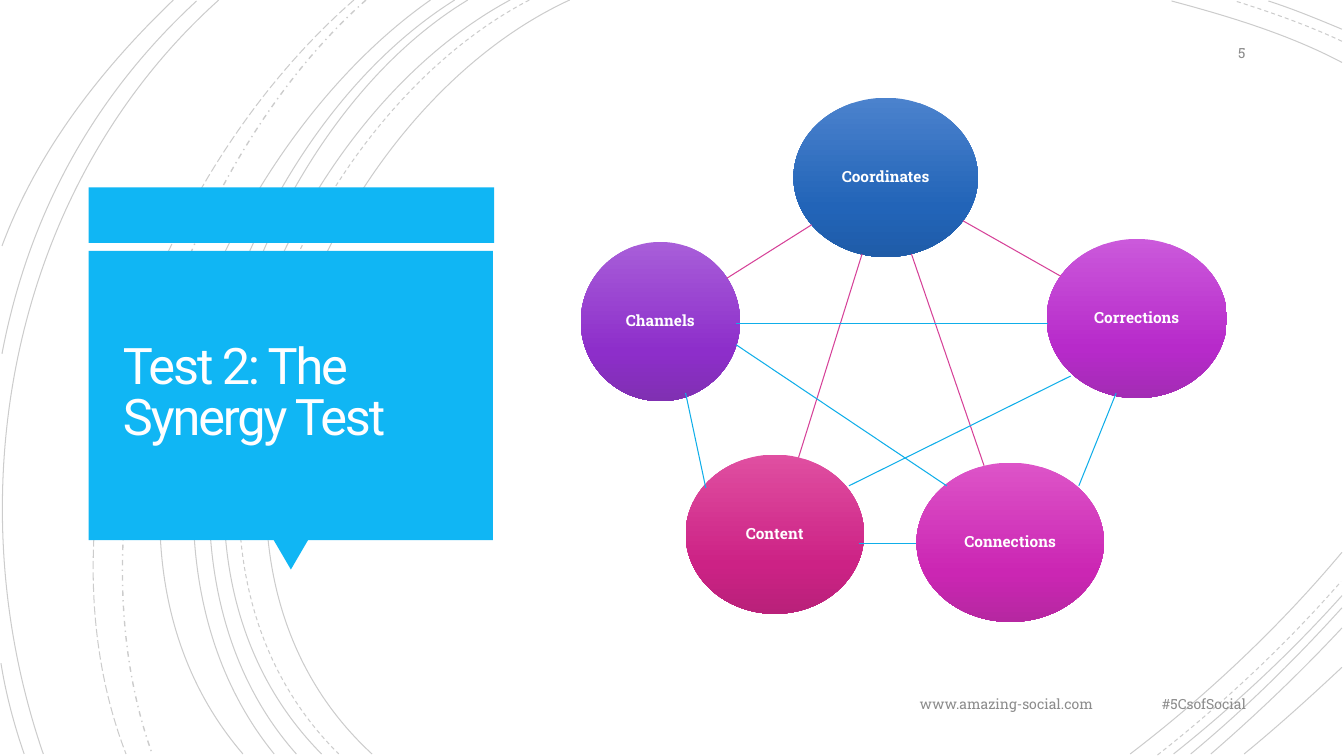
from lxml import etree
from pptx import Presentation
from pptx.dml.color import RGBColor
from pptx.enum.dml import MSO_LINE
from pptx.enum.shapes import MSO_CONNECTOR, MSO_SHAPE
from pptx.enum.text import MSO_ANCHOR, PP_ALIGN
from pptx.oxml.ns import qn
from pptx.util import Inches, Pt

COLORS = {"panel": "10B6F4", "title": "FFFEFF", "footer": "8C8C8C", "label": "FFFFFF",
          "pink": "D64198", "blue": "0FAEE9", "arc": "000000"}
TITLE_FONT, BODY_FONT = "Roboto", "Roboto Slab"

# Cubic curves grouped by dash style: start, two control points, end
ARCS = {
    MSO_LINE.SOLID: [
        [(5.65, 0), (3.15, 1.15), (1.43, 5.4), (3.69, 7.48)],
        [(13.31, 0.62), (12.78, 0.34), (12.18, 0.16), (11.62, 0.01)],
        [(11.21, 7.48), (11.97, 6.9), (12.69, 6.22), (13.31, 5.48)],
        [(5.06, 0), (2.7, 1.27), (1.1, 5.37), (3.19, 7.48)],
        [(13.31, 0.29), (13.07, 0.19), (12.83, 0.09), (12.58, 0.01)],
        [(11.64, 7.48), (12.23, 7.01), (12.8, 6.48), (13.31, 5.91)],
        [(4.64, 0), (2.44, 1.33), (1.1, 5.41), (2.94, 7.48)],
        [(11.81, 7.48), (12.34, 7.04), (12.84, 6.55), (13.31, 6.03)],
        [(4.51, 0), (2.31, 1.38), (0.97, 5.33), (2.72, 7.48)],
        [(12.01, 7.48), (12.46, 7.09), (12.9, 6.67), (13.31, 6.23)],
        [(4.27, 0), (2.17, 1.47), (0.53, 5.29), (2.41, 7.48)],
        [(12.34, 7.48), (12.67, 7.21), (12.99, 6.92), (13.31, 6.62)],
        [(2.17, 0), (0.11, 1.85), (-0.46, 4.9), (0.43, 7.48)],
        [(1.95, 0.01), (0.92, 0.96), (0.28, 2.14), (0.02, 3.51)],
        [(0.01, 6.58), (0.06, 6.89), (0.14, 7.19), (0.24, 7.48)],
        [(1.72, 0), (1, 0.69), (0.37, 1.5), (0.02, 2.44)],
    ],
    MSO_LINE.DASH: [
        [(5.25, 0), (2.85, 1.25), (1.23, 5.37), (3.36, 7.48)],
        [(13.31, 0.41), (12.97, 0.25), (12.6, 0.12), (12.25, 0.01)],
        [(11.48, 7.49), (12.13, 6.98), (12.75, 6.4), (13.3, 5.77)],
    ],
    MSO_LINE.DASH_DOT: [[(3.63, 0), (1.76, 1.66), (0.65, 5.09), (1.51, 7.48)]],
    MSO_LINE.LONG_DASH: [[(3.51, 0), (1.57, 1.69), (0.29, 4.99), (1.25, 7.48)]],
}

# Label, left, top, width, gradient colours
CIRCLES = [
    ("Coordinates", 7.87, 0.97, 1.83, ("4B82CD", "2264B8", "1F5CA8")),
    ("Channels", 5.76, 2.4, 1.58, ("A85ED9", "8D2ECA", "8030B2")),
    ("Corrections", 10.38, 2.37, 1.79, ("CB59DB", "B72ACA", "A32CB4")),
    ("Connections", 9.09, 4.59, 1.86, ("DD54C8", "CB26B3", "B627A1")),
    ("Content", 6.8, 4.51, 1.77, ("E04FA1", "CC2285", "B9217A")),
]
CIRCLE_HEIGHT = 1.58
GRADIENT_POSITIONS = (0, 69, 100)

LINKS = {
    "pink": [(8.05, 2.23, 7.21, 2.76), (9.55, 2.19, 10.52, 2.74),
             (9.04, 2.52, 9.76, 4.62), (8.55, 2.52, 7.92, 4.54)],
    "blue": [(6.8, 3.9, 7, 4.84), (8.52, 5.39, 9.09, 5.39), (10.7, 4.82, 11.07, 3.9),
             (7.3, 3.21, 10.39, 3.21), (7.3, 3.42, 9.39, 4.82), (8.42, 4.82, 10.62, 3.73)],
}


def rgb(name):
    return RGBColor.from_string(COLORS[name])


def set_attributes(target, values):
    for name, value in values.items():
        setattr(target, name, value)


def add_arc(slide, points, dash):
    """Draw one faint cubic curve through a start, two controls and an end."""
    start, *others = [(Inches(x), Inches(y)) for x, y in points]
    builder = slide.shapes.build_freeform(*start)
    builder.add_line_segments(others, close=False)
    shape = builder.convert_to_shape()
    shape.shadow.inherit = False
    shape.fill.background()
    shape.line.color.rgb = rgb("arc")
    shape.line.width = Pt(1 if dash == MSO_LINE.DASH_DOT else 0.75)
    shape.line.dash_style = dash
    color = next(shape.line._ln.iter(qn("a:srgbClr")))
    etree.SubElement(color, qn("a:alpha"), val="20000")
    curve_path = next(shape._element.iter(qn("a:path")))
    curve = etree.SubElement(curve_path, qn("a:cubicBezTo"))
    for segment in curve_path.findall(qn("a:lnTo")):
        curve.append(segment[0])
        curve_path.remove(segment)


def add_shape(slide, kind, box):
    shape = slide.shapes.add_shape(kind, *map(Inches, box))
    shape.shadow.inherit = False
    shape.line.fill.background()
    return shape


def add_panel(slide, kind, box, rotation=0):
    shape = add_shape(slide, kind, box)
    shape.fill.solid()
    shape.fill.fore_color.rgb = rgb("panel")
    shape.rotation = rotation


def write_text(shape, text, font, align, spacing=1, inset=(0.1, 0.05)):
    """Fill a shape with one paragraph, centred vertically, and return it."""
    side, end = map(Inches, inset)
    frame = shape.text_frame
    set_attributes(frame, {"word_wrap": True, "vertical_anchor": MSO_ANCHOR.MIDDLE,
                           "margin_left": side, "margin_right": side,
                           "margin_top": end, "margin_bottom": end})
    paragraph = frame.paragraphs[0]
    set_attributes(paragraph, {"alignment": align, "line_spacing": spacing})
    run = paragraph.add_run()
    run.text = text
    color = font["color"]
    set_attributes(run.font, {key: value for key, value in font.items() if key != "color"})
    run.font.color.rgb = rgb(color)
    return paragraph


def add_text(slide, box, *text_format, **options):
    text_box = slide.shapes.add_textbox(*map(Inches, box))
    return write_text(text_box, *text_format, **options)


def add_right_tabs(paragraph, positions):
    tabs = etree.SubElement(paragraph._p.get_or_add_pPr(), qn("a:tabLst"))
    for position in positions:
        etree.SubElement(tabs, qn("a:tab"), pos=str(Inches(position)), algn="r")


def add_circle(slide, label, left, top, width, gradient):
    circle = add_shape(slide, MSO_SHAPE.OVAL, (left, top, width, CIRCLE_HEIGHT))
    circle.fill.gradient()
    circle.fill.gradient_angle = 270
    stops = next(circle._element.iter(qn("a:gsLst")))
    for stop in list(stops):
        stops.remove(stop)
    for position, color in zip(GRADIENT_POSITIONS, gradient):
        stop = etree.SubElement(stops, qn("a:gs"), pos=str(position * 1000))
        etree.SubElement(stop, qn("a:srgbClr"), val=color)
    font = {"name": BODY_FONT, "size": Pt(11), "bold": True, "color": "label"}
    paragraph = write_text(circle, label, font, PP_ALIGN.CENTER, 0.9, (0.01, 0.01))
    paragraph.space_after = Pt(3.85)


def add_link(slide, ends, color):
    link = slide.shapes.add_connector(MSO_CONNECTOR.STRAIGHT, *map(Inches, ends))
    link.line.color.rgb = rgb(color)
    link.line.width = Pt(0.75)
    etree.SubElement(link._element.spPr, qn("a:effectLst"))


def main():
    presentation = Presentation()
    presentation.slide_width, presentation.slide_height = Inches(13.33), Inches(7.5)
    slide = presentation.slides.add_slide(presentation.slide_layouts[6])

    for dash, arcs in ARCS.items():
        for points in arcs:
            add_arc(slide, points, dash)

    add_panel(slide, MSO_SHAPE.RECTANGLE, (0.88, 1.86, 4.02, 0.55))
    add_panel(slide, MSO_SHAPE.ISOSCELES_TRIANGLE, (2.71, 5.35, 0.35, 0.3), rotation=180)
    add_panel(slide, MSO_SHAPE.RECTANGLE, (0.88, 2.49, 4.01, 2.87))

    title_font = {"name": TITLE_FONT, "size": Pt(36), "color": "title"}
    title = add_text(slide, (0.97, 2.57, 4.07, 2.69), "Test 2: The Synergy Test",
                     title_font, PP_ALIGN.LEFT, spacing=0.85, inset=(0.25, 0.25))
    title.runs[0].font._element.set("spc", "-150")

    footer_font = {"name": BODY_FONT, "size": Pt(10), "color": "footer"}
    footer = add_text(slide, (0.88, 6.81, 11.58, 0.35), "\twww.amazing-social.com\t#5CsofSocial",
                      footer_font, PP_ALIGN.LEFT)
    add_right_tabs(footer, (9.86, 11.38))
    add_text(slide, (11.45, 0.35, 1, 0.35), "5", footer_font, PP_ALIGN.RIGHT)

    for circle in CIRCLES:
        add_circle(slide, *circle)
    for color, links in LINKS.items():
        for ends in links:
            add_link(slide, ends, color)

    presentation.save("out.pptx")


if __name__ == "__main__":
    main()
